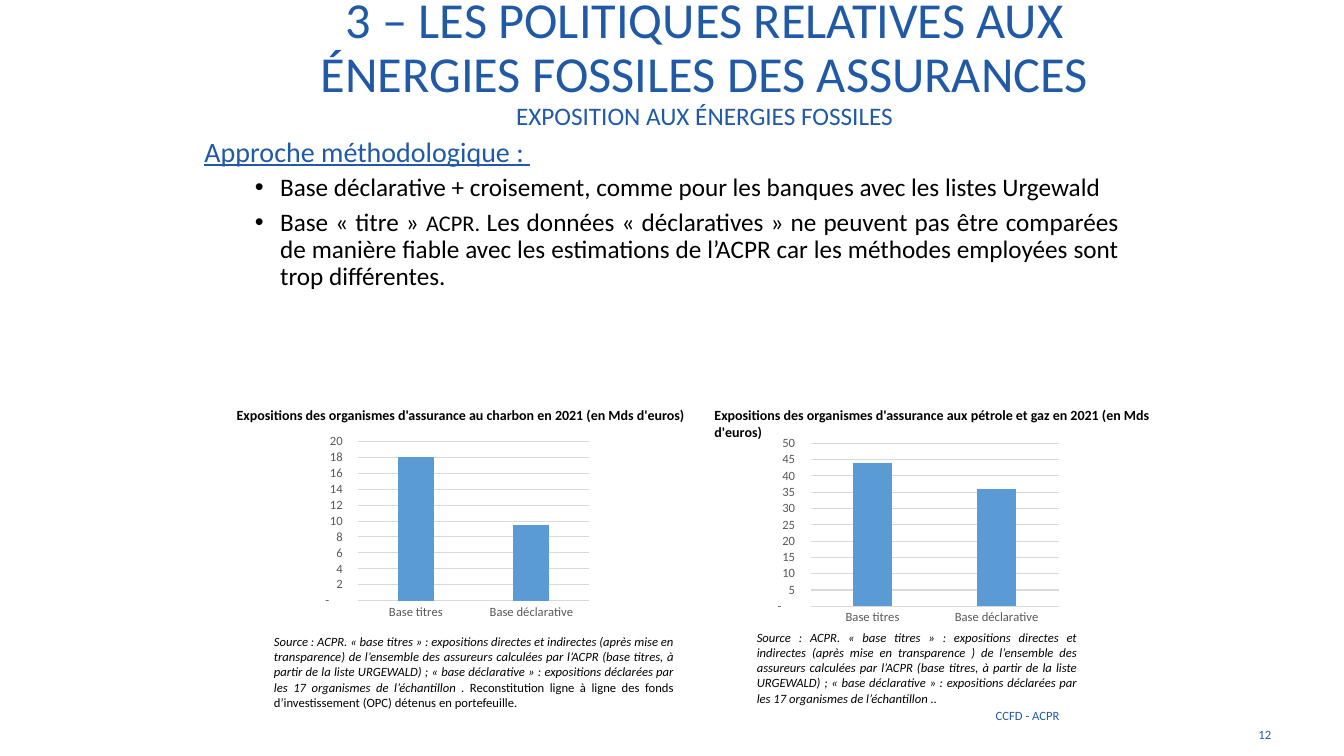
from dataclasses import dataclass

from lxml import etree
from pptx import Presentation
from pptx.chart.data import CategoryChartData
from pptx.dml.color import RGBColor
from pptx.enum.chart import XL_CHART_TYPE as ChartType, XL_TICK_MARK as Tick
from pptx.enum.text import MSO_ANCHOR as Anchor, MSO_AUTO_SIZE as AutoSize, PP_ALIGN as Align
from pptx.oxml import parse_xml
from pptx.oxml.ns import nsdecls, qn
from pptx.util import Pt


@dataclass(frozen=True)
class Theme:
    """Colours, font and type sizes of the deck."""
    font: str = "Calibri"
    blue: str = "205AA7"
    black: str = "000000"
    grey: str = "595959"
    grid: str = "D9D9D9"
    bar: str = "5B9BD5"
    title: int = 36
    heading: int = 20
    body: int = 18
    acronym: int = 16
    caption: int = 10
    small: int = 9


THEME = Theme()
NUMBER_FORMAT = r'_-* #\ ##0\ _€_-;\-* #\ ##0\ _€_-;_-* "-"??\ _€_-'
CATEGORIES = ["Base titres", "Base déclarative"]


def style(font, size, color, **flags):
    """Set the size, colour and flags of a font."""
    font.name, font.size = THEME.font, Pt(size)
    font.color.rgb = RGBColor.from_string(color)
    for flag, value in flags.items():
        setattr(font, flag, value)


def add_runs(p, runs):
    """Add (text, size, colour, flags) runs to a paragraph."""
    for text, size, color, flags in runs:
        r = p.add_run()
        r.text = text
        style(r.font, size, color, **flags)


def add_text(slide, box, runs, align=Align.LEFT, anchor=Anchor.TOP):
    """Add a wrapping text box with one paragraph and return its frame."""
    tf = slide.shapes.add_textbox(*map(Pt, box)).text_frame
    tf.word_wrap, tf.vertical_anchor = True, anchor
    p = tf.paragraphs[0]
    p.alignment = align
    add_runs(p, runs)
    return tf


def add_title(slide, box, title, subtitle):
    """Fill the title placeholder with a title and a smaller second line."""
    sp = slide.shapes.title
    sp.left, sp.top, sp.width, sp.height = map(Pt, box)
    tf = sp.text_frame
    tf.word_wrap, tf.auto_size, tf.vertical_anchor = True, AutoSize.NONE, Anchor.MIDDLE
    p = tf.paragraphs[0]
    p.text = f"{title}\v{subtitle}"
    p.alignment, p.line_spacing = Align.CENTER, 0.9
    for r, size in zip(p.runs, (THEME.title, THEME.body)):
        style(r.font, size, THEME.blue)


def add_method(slide, box, heading, bullets):
    """Add the underlined heading followed by its bullets."""
    tf = add_text(slide, box, [(heading, THEME.heading, THEME.blue, {"underline": True})], Align.JUSTIFY)
    tf.paragraphs[0].line_spacing = 0.9
    for runs in bullets:
        p = tf.add_paragraph()
        pPr = p._p.get_or_add_pPr()
        pPr.set("marL", str(Pt(54)))
        pPr.set("indent", str(Pt(-18)))
        etree.SubElement(pPr, qn("a:buFont")).set("typeface", "Arial")
        etree.SubElement(pPr, qn("a:buChar")).set("char", "•")
        p.alignment, p.line_spacing, p.space_before = Align.JUSTIFY, 0.9, Pt(5)
        add_runs(p, [(text, size, THEME.black, {}) for text, size in runs])


def add_bars(slide, box, values, top, step, plot):
    """Add a column chart whose plot area takes the given share of its box."""
    data = CategoryChartData()
    data.categories = CATEGORIES
    data.add_series("Expositions", values)
    chart = slide.shapes.add_chart(ChartType.COLUMN_CLUSTERED, *map(Pt, box), data).chart
    chart.has_legend = chart.has_title = False
    style(chart.font, THEME.caption, THEME.black)
    bars = chart.plots[0]
    bars.gap_width, bars.overlap, bars.vary_by_categories = 219, -27, False
    fill = bars.series[0].format.fill
    fill.solid()
    fill.fore_color.rgb = RGBColor.from_string(THEME.bar)
    cat, val = chart.category_axis, chart.value_axis
    for axis in (cat, val):
        axis.major_tick_mark = axis.minor_tick_mark = Tick.NONE
        style(axis.tick_labels.font, THEME.small, THEME.grey)
    val.minimum_scale, val.maximum_scale, val.major_unit = 0, top, step
    val.tick_labels.number_format = NUMBER_FORMAT
    val.tick_labels.number_format_is_linked = False
    val.format.line.fill.background()
    for line in (cat.format.line, val.major_gridlines.format.line):
        line.color.rgb, line.width = RGBColor.from_string(THEME.grid), Pt(0.75)
    area = chart._chartSpace.chart.plotArea
    for old in area.findall(qn("c:layout")):
        area.remove(old)
    sizes = "".join(f'<c:{tag} val="{share}"/>' for tag, share in zip("xywh", plot))
    area.insert(0, parse_xml(
        f'<c:layout {nsdecls("c")}><c:manualLayout><c:layoutTarget val="inner"/>'
        f'<c:xMode val="edge"/><c:yMode val="edge"/>{sizes}</c:manualLayout></c:layout>'))


def add_panel(slide, box, caption, chart_box, chart, note_box, note):
    """Add a caption, a chart and a source note, placed from the panel's corner."""
    x, y, w, h = box
    add_text(slide, (x, y, w, h), [(caption, THEME.caption, THEME.black, {"bold": True})])
    for add, (dx, dy, width, height), args in (
            (add_bars, chart_box, chart),
            (add_text, note_box, (note, Align.JUSTIFY))):
        add(slide, (x + dx, y + dy, width, height), *args)


def add_footer(slide, box, label, number):
    """Add the footer label and the page number in the bottom band."""
    x, y, w, h = box
    add_text(slide, (x, y, 391.7, 21.6), [(label, THEME.small, THEME.blue, {})], Align.RIGHT)
    add_text(slide, (x + w - 56.9, y + h - 28.1, 56.9, 28.1),
             [(number, THEME.small, THEME.blue, {})], Align.RIGHT, Anchor.MIDDLE)


def main():
    """Build the slide and save it."""
    prs = Presentation()
    prs.slide_width, prs.slide_height = Pt(960), Pt(540)
    slide = prs.slides.add_slide(prs.slide_layouts[5])
    add_title(slide, (179.3, 0, 648, 90),
              "3 – LES POLITIQUES RELATIVES AUX ÉNERGIES FOSSILES DES ASSURANCES",
              "EXPOSITION AUX ÉNERGIES FOSSILES")
    add_method(slide, (139, 95, 667.4, 388.8), "Approche méthodologique : ", [
        [("Base déclarative + croisement, comme pour les banques avec les listes Urgewald", THEME.body)],
        [("Base « titre » ", THEME.body), ("ACPR. ", THEME.acronym),
         ("Les données « déclaratives » ne peuvent pas être comparées de manière fiable avec les "
          "estimations de l’ACPR car les méthodes employées sont trop différentes.", THEME.body)]])
    italic = {"italic": True}
    add_panel(
        slide, (162, 286.6, 341.3, 19.4),
        "Expositions des organismes d'assurance au charbon en 2021 (en Mds d'euros)",
        (61.2, 18.7, 203.8, 144), ((18.1, 9.5), 20, 2, (0.16, 0.07, 0.81, 0.79)),
        (26.6, 162.7, 299.5, 61.9),
        [("Source : ACPR. « base titres » : expositions directes et indirectes (après mise en "
          "transparence) de l’ensemble des assureurs calculées par l’ACPR (base titres, à partir de la "
          "liste URGEWALD) ; « base déclarative » : expositions déclarées par les 17 organismes de "
          "l’échantillon . ", THEME.small, THEME.black, italic),
         ("Reconstitution ligne à ligne des fonds d’investissement (OPC) détenus en portefeuille.",
          THEME.small, THEME.black, {})])
    add_panel(
        slide, (503.3, 286.6, 360, 31.7),
        "Expositions des organismes d'assurance aux pétrole et gaz en 2021 (en Mds d'euros)",
        (46.1, 23, 211, 140.4), ((44, 36), 50, 5, (0.14, 0.05, 0.84, 0.83)),
        (30.2, 159.8, 242.6, 61.9),
        [("Source : ACPR. « base titres » : expositions directes et indirectes (après mise en "
          "transparence ) de l’ensemble des assureurs calculées par l’ACPR (base titres, à partir de la "
          "liste URGEWALD) ; « base déclarative » : expositions déclarées par les 17 organismes de "
          "l’échantillon ..", THEME.small, THEME.black, italic)])
    add_footer(slide, (372.2, 501.8, 542.9, 36.8), "CCFD - ACPR", "12")
    prs.save("out.pptx")


if __name__ == "__main__":
    main()
